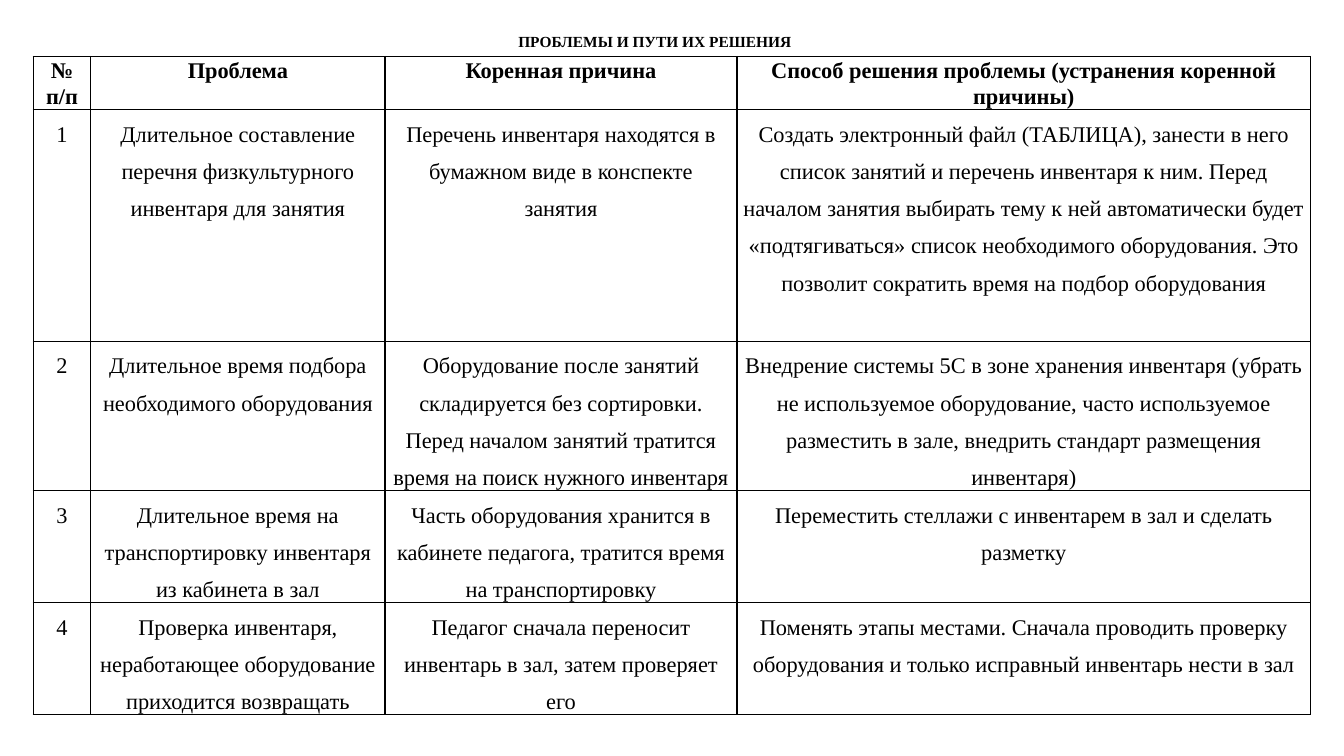
from lxml import etree
from pptx import Presentation
from pptx.dml.color import RGBColor
from pptx.enum.text import MSO_ANCHOR, PP_ALIGN
from pptx.oxml.ns import qn
from pptx.util import Inches, Pt

BLACK = RGBColor(0, 0, 0)
LEFT, CENTER = PP_ALIGN.LEFT, PP_ALIGN.CENTER
TOP, MIDDLE = MSO_ANCHOR.TOP, MSO_ANCHOR.MIDDLE
FONT = "Times New Roman"

WIDTHS = [0.57, 2.92, 3.49, 5.69]
HEIGHTS = [0.32, 2.3, 1.37, 0.91, 0.91]
ROWS = [
    ["№ п/п", "Проблема", "Коренная причина",
     "Способ решения проблемы (устранения коренной причины)"],
    ["1", "Длительное составление перечня физкультурного инвентаря для занятия",
     "Перечень инвентаря находятся в бумажном виде в конспекте занятия",
     "Создать электронный файл (ТАБЛИЦА), занести в него список занятий и "
     "перечень инвентаря к ним. Перед началом занятия выбирать тему к ней "
     "автоматически будет «подтягиваться» список необходимого оборудования. "
     "Это позволит сократить время на подбор оборудования"],
    ["2", "Длительное время подбора необходимого оборудования",
     "Оборудование после занятий складируется без сортировки. "
     "Перед началом занятий тратится время на поиск нужного инвентаря",
     "Внедрение системы 5С в зоне хранения инвентаря (убрать не используемое "
     "оборудование, часто используемое разместить в зале, внедрить стандарт "
     "размещения инвентаря)"],
    ["3", "Длительное время на транспортировку инвентаря из кабинета в зал",
     "Часть оборудования хранится в кабинете педагога, тратится время на "
     "транспортировку",
     "Переместить стеллажи с инвентарем в зал и сделать разметку"],
    ["4", "Проверка инвентаря, неработающее оборудование приходится возвращать",
     "Педагог сначала переносит инвентарь в зал, затем проверяет его",
     "Поменять этапы местами. Сначала проводить проверку оборудования и "
     "только исправный инвентарь нести в зал"],
]


def put_text(frame, text, size=16, bold=False, align=CENTER, line=1.0, after=0):
    frame.word_wrap = True
    frame.text = text
    para = frame.paragraphs[0]
    para.alignment = align
    para.line_spacing = line
    para.space_before = Pt(0)
    para.space_after = Pt(after)
    font = para.runs[0].font
    font.name = FONT
    font.size = Pt(size)
    font.bold = bold
    font.color.rgb = BLACK


def add_edges(cell):
    props = cell._tc.get_or_add_tcPr()
    for side in ("lnL", "lnR", "lnT", "lnB"):
        edge = etree.SubElement(props, qn(f"a:{side}"), w=str(Pt(1)))
        fill = etree.SubElement(edge, qn("a:solidFill"))
        etree.SubElement(fill, qn("a:srgbClr"), val=str(BLACK))


deck = Presentation()
deck.slide_width, deck.slide_height = Inches(13.33), Inches(7.5)
slide = deck.slides.add_slide(deck.slide_layouts[5])

# Title
title = slide.shapes.title
title.left, title.top = Inches(5.04), Inches(0.26)
title.width, title.height = Inches(7.97), Inches(0.3)
title.text_frame.vertical_anchor = MIDDLE
put_text(title.text_frame, "ПРОБЛЕМЫ И ПУТИ ИХ РЕШЕНИЯ",
         size=11, bold=True, align=LEFT)

# Table of problems, causes and solutions
table = slide.shapes.add_table(
    len(ROWS), len(WIDTHS), Inches(0.33), Inches(0.56),
    Inches(sum(WIDTHS)), Inches(sum(HEIGHTS))).table
table.first_row = table.horz_banding = False
for col, width in zip(table.columns, WIDTHS):
    col.width = Inches(width)
for r, texts in enumerate(ROWS):
    table.rows[r].height = Inches(HEIGHTS[r])
    head = r == 0
    for c, text in enumerate(texts):
        cell = table.cell(r, c)
        cell.margin_left = cell.margin_right = Inches(0.05)
        cell.margin_top = cell.margin_bottom = 0
        cell.vertical_anchor = TOP
        add_edges(cell)
        cell.fill.background()
        put_text(cell.text_frame, text, bold=head,
                 line=1.07 if head else 1.5, after=8)

deck.save("out.pptx")
